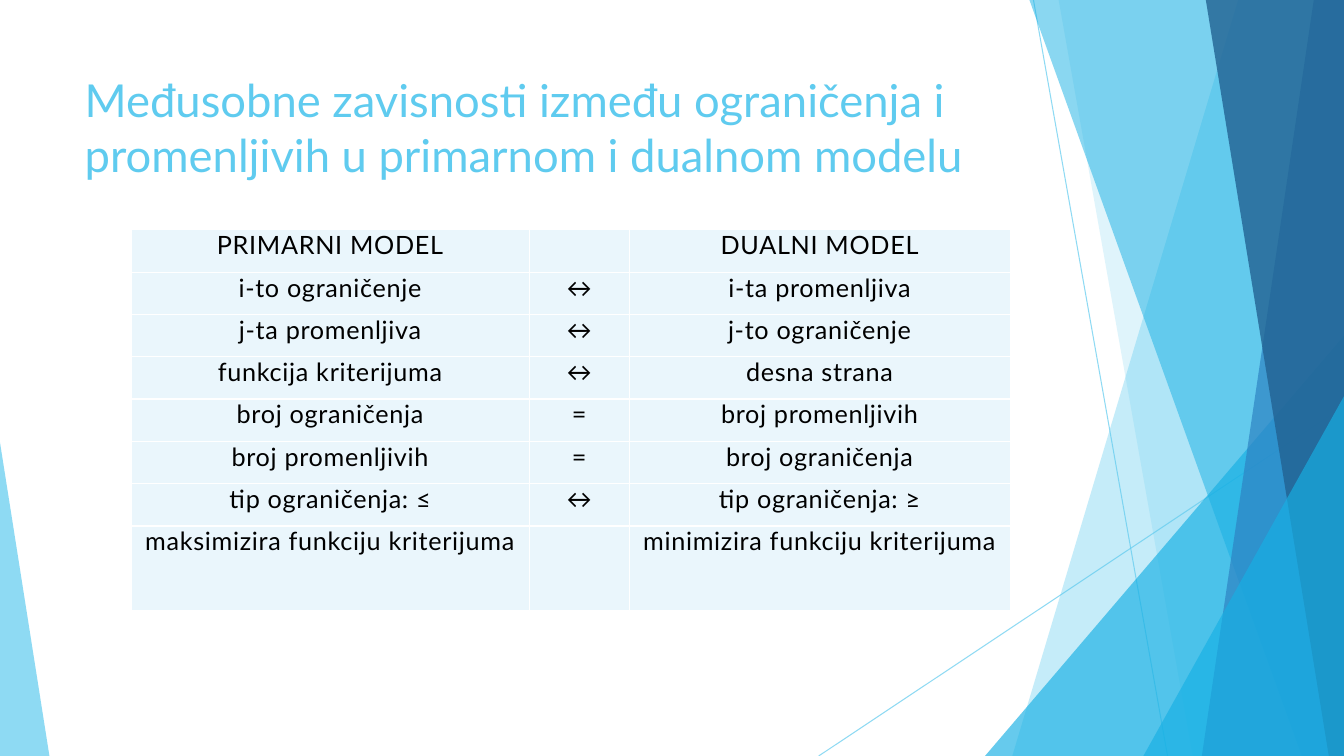
from lxml import etree
from pptx import Presentation
from pptx.dml.color import RGBColor
from pptx.enum.shapes import MSO_CONNECTOR, MSO_SHAPE
from pptx.enum.text import MSO_ANCHOR, PP_ALIGN
from pptx.oxml.ns import qn
from pptx.util import Inches, Pt

STRAIGHT = MSO_CONNECTOR.STRAIGHT
TRIANGLE = MSO_SHAPE.ISOSCELES_TRIANGLE
CENTER, LEFT, TOP = PP_ALIGN.CENTER, PP_ALIGN.LEFT, MSO_ANCHOR.TOP

WIDTH, HEIGHT = 13.33, 7.5
FONT = "Lato"
COLORS = {
    "sky": "5FCBEF",
    "cyan": "17B0E4",
    "blue": "2E83C3",
    "navy": "226292",
    "cell": "EAF6FC",
    "border": "FFFFFF",
    "text": "000000",
}
TITLE = "Međusobne zavisnosti između ograničenja i promenljivih u primarnom i dualnom modelu"
MODEL_ROWS = [
    ("PRIMARNI MODEL", "", "DUALNI MODEL"),
    ("i-to ograničenje", "↔", "i-ta promenljiva"),
    ("j-ta promenljiva", "↔", "j-to ograničenje"),
    ("funkcija kriterijuma", "↔", "desna strana"),
    ("broj ograničenja", "=", "broj promenljivih"),
    ("broj promenljivih", "=", "broj ograničenja"),
    ("tip ograničenja: ≤", "↔", "tip ograničenja: ≥"),
    ("maksimizira funkciju kriterijuma", "", "minimizira funkciju kriterijuma"),
]
COLUMN_WIDTHS = (3.95, 0.99, 3.78)
ROW_UNITS = (1, 1, 1, 1, 1, 1, 1, 2)


def color(name):
    """Return the named colour."""
    return RGBColor.from_string(COLORS[name])


def set_opacity(shape, percent):
    """Make the shape's single colour partly transparent."""
    for element in shape._element.iter(qn("a:srgbClr")):
        etree.SubElement(element, qn("a:alpha")).set("val", str(percent * 1000))


def paint(shape, fill, opacity):
    """Fill a shape without outline or shadow."""
    shape.shadow.inherit = False
    shape.line.fill.background()
    shape.fill.solid()
    shape.fill.fore_color.rgb = color(fill)
    set_opacity(shape, opacity)


def add_band(slide, top_x, bottom_x, fill, opacity):
    """Draw a slanted band reaching the slide's right edge."""
    builder = slide.shapes.build_freeform(Inches(top_x), 0, scale=1.0)
    corners = [(WIDTH, 0), (WIDTH, HEIGHT), (bottom_x, HEIGHT)]
    builder.add_line_segments([(Inches(x), Inches(y)) for x, y in corners], close=True)
    paint(builder.convert_to_shape(), fill, opacity)


def add_corner(slide, left, top, width, apex, fill, opacity):
    """Draw a right triangle standing on the slide's bottom edge."""
    shape = slide.shapes.add_shape(
        TRIANGLE, Inches(left), Inches(top), Inches(width), Inches(HEIGHT - top))
    shape.adjustments[0] = apex
    paint(shape, fill, opacity)


def add_ray(slide, start, end):
    """Draw a thin line across the decoration."""
    ray = slide.shapes.add_connector(STRAIGHT, *map(Inches, start + end))
    ray.line.color.rgb = color("sky")
    ray.line.width = Pt(0.75)
    set_opacity(ray, 70)
    etree.SubElement(ray._element.spPr, qn("a:effectLst"))


def add_decoration(slide):
    """Layer the rays, bands and corners from back to front."""
    add_ray(slide, (10.25, 0), (11.58, HEIGHT))
    add_ray(slide, (WIDTH, 4.03), (8.12, HEIGHT))
    add_band(slide, 12.28, 10.04, "sky", 36)
    add_band(slide, 10.5, 11.83, "sky", 20)
    add_corner(slide, 9.77, 3.33, WIDTH - 9.77, 1, "cyan", 66)
    add_band(slide, 10.21, 12.91, "cyan", 50)
    add_band(slide, 13.03, 11.92, "blue", 70)
    add_band(slide, 11.96, 13.18, "navy", 80)
    add_corner(slide, 11.34, 3.93, WIDTH - 11.34, 1, "cyan", 66)
    add_corner(slide, 0, 4.39, 0.49, 0, "sky", 70)


def format_paragraph(paragraph, size, font_color, alignment):
    """Set the font and alignment of a paragraph."""
    paragraph.alignment = alignment
    paragraph.font.name = FONT
    paragraph.font.size = Pt(size)
    paragraph.font.color.rgb = color(font_color)


def add_title(slide, left, top, width, height):
    """Place the heading in the title placeholder."""
    title = slide.shapes.title
    title.left, title.top, title.width, title.height = map(Inches, (left, top, width, height))
    frame = title.text_frame
    frame.text = TITLE
    frame.word_wrap = True
    frame.vertical_anchor = TOP
    format_paragraph(frame.paragraphs[0], 32.4, "sky", LEFT)
    frame.paragraphs[0].line_spacing = 1.0


def add_borders(cell):
    """Outline a cell on all four sides."""
    properties = cell._tc.get_or_add_tcPr()
    for index, side in enumerate(("a:lnL", "a:lnR", "a:lnT", "a:lnB")):
        line = etree.Element(qn(side), w=str(Pt(1)))
        fill = etree.SubElement(line, qn("a:solidFill"))
        etree.SubElement(fill, qn("a:srgbClr")).set("val", COLORS["border"])
        properties.insert(index, line)


def fill_cell(cell, text):
    """Write and format one table cell."""
    cell.text = text
    cell.margin_left = cell.margin_right = Inches(0.07)
    cell.margin_top = cell.margin_bottom = 0
    cell.fill.solid()
    cell.fill.fore_color.rgb = color("cell")
    paragraph = cell.text_frame.paragraphs[0]
    format_paragraph(paragraph, 18, "text", CENTER)
    paragraph._p.pPr.find(qn("a:defRPr")).set("spc", "50")
    add_borders(cell)


def add_model_table(slide, left, top, width, height):
    """Compare the primal and dual models in a table."""
    table = slide.shapes.add_table(
        len(MODEL_ROWS), len(COLUMN_WIDTHS), *map(Inches, (left, top, width, height))).table
    for column, share in zip(table.columns, COLUMN_WIDTHS):
        column.width = Inches(width * share / sum(COLUMN_WIDTHS))
    for row, units, texts in zip(table.rows, ROW_UNITS, MODEL_ROWS):
        row.height = Inches(height * units / sum(ROW_UNITS))
        for cell, text in zip(row.cells, texts):
            fill_cell(cell, text)


def main():
    """Build and save the presentation."""
    presentation = Presentation()
    presentation.slide_width, presentation.slide_height = Inches(WIDTH), Inches(HEIGHT)
    slide = presentation.slides.add_slide(presentation.slide_layouts[5])
    add_decoration(slide)
    add_title(slide, 0.74, 0.67, 9.4, 1.44)
    add_model_table(slide, 1.3, 2.28, 8.72, 3.78)
    presentation.save("out.pptx")


if __name__ == "__main__":
    main()
